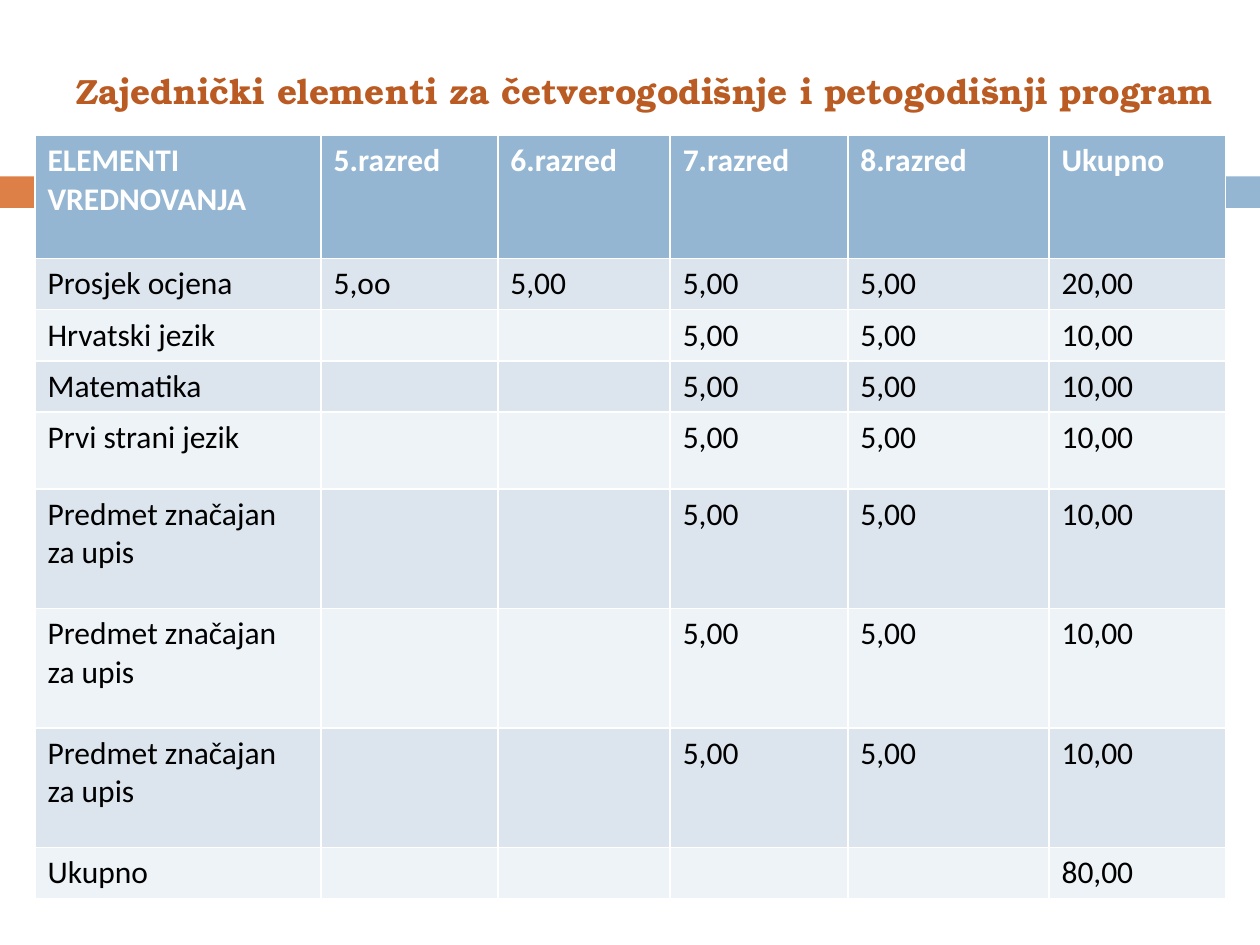
from pptx import Presentation
from pptx.dml.color import RGBColor
from pptx.enum.shapes import MSO_SHAPE as SHAPE
from pptx.enum.text import MSO_ANCHOR as ANCHOR, MSO_AUTO_SIZE as AUTO_SIZE, PP_ALIGN as ALIGN
from pptx.util import Pt

COLORS = {
    "orange": "DD8047",
    "blue": "94B6D2",
    "title": "B95B22",
    "band_dark": "DCE5EE",
    "band_light": "EEF3F7",
    "white": "FFFFFF",
    "black": "000000",
}


def color(name):
    return RGBColor.from_string(COLORS[name])


def set_font(paragraph, face, size, color_name, bold):
    font = paragraph.font
    font.name = face
    font.size = Pt(size)
    font.bold = bold
    font.color.rgb = color(color_name)


presentation = Presentation()
presentation.slide_width = Pt(720)
presentation.slide_height = Pt(540)
slide = presentation.slides.add_slide(presentation.slide_layouts[5])

for left, width, fill in [(0, 42, "orange"), (46.8, 673.2, "blue")]:
    stripe = slide.shapes.add_shape(SHAPE.RECTANGLE, Pt(left), Pt(100.8), Pt(width), Pt(18))
    stripe.shadow.inherit = False
    stripe.fill.solid()
    stripe.fill.fore_color.rgb = color(fill)
    stripe.line.fill.background()

heading = slide.shapes.title
heading.left, heading.top, heading.width, heading.height = Pt(36.5), Pt(26), Pt(675.5), Pt(51)
heading.text_frame.text = "Zajednički elementi za četverogodišnje i petogodišnji program"
heading.text_frame.auto_size = AUTO_SIZE.NONE
heading.text_frame.vertical_anchor = ANCHOR.MIDDLE
heading.text_frame.paragraphs[0].alignment = ALIGN.LEFT
set_font(heading.text_frame.paragraphs[0], "TeX Gyre Bonum", 20, "title", True)

subject_points = ["", "", "5,00", "5,00", "10,00"]
scores = [
    ["ELEMENTI VREDNOVANJA", "5.razred", "6.razred", "7.razred", "8.razred", "Ukupno"],
    ["Prosjek ocjena", "5,oo", "5,00", "5,00", "5,00", "20,00"],
    ["Hrvatski jezik", *subject_points],
    ["Matematika", *subject_points],
    ["Prvi strani jezik", *subject_points],
    *[["Predmet značajan za upis", *subject_points] for _ in range(3)],
    ["Ukupno", "", "", "", "", "80,00"],
]
column_widths = [163.5, 101, 98.5, 101.5, 115, 101]
row_heights = [70.5, 29.2, 29.2, 29.2, 44, 68.3, 68.3, 68.3, 29.2]

score_table = slide.shapes.add_table(
    len(scores), len(column_widths), Pt(20), Pt(77.3), Pt(sum(column_widths)), Pt(sum(row_heights))
).table
for column, width in zip(score_table.columns, column_widths):
    column.width = Pt(width)

for index, (row, height, texts) in enumerate(zip(score_table.rows, row_heights, scores)):
    row.height = Pt(height)
    is_header = index == 0
    band = "blue" if is_header else "band_dark" if index % 2 else "band_light"
    for cell, text in zip(row.cells, texts):
        cell.text = text
        cell.fill.solid()
        cell.fill.fore_color.rgb = color(band)
        set_font(cell.text_frame.paragraphs[0], "Calibri", 18, "white" if is_header else "black", is_header)

presentation.save("out.pptx")
